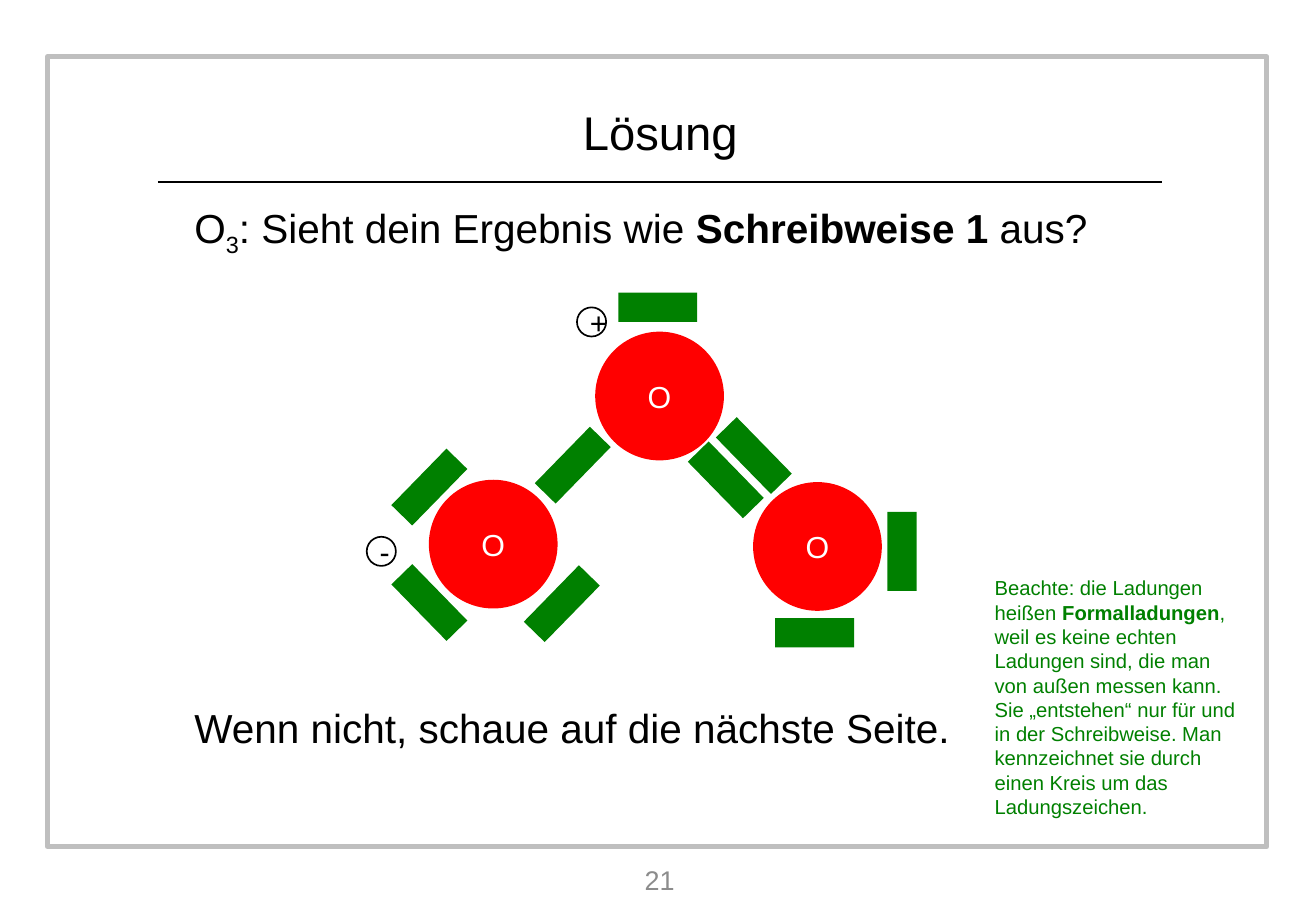
from pptx import Presentation
from pptx.dml.color import RGBColor
from pptx.enum.shapes import MSO_CONNECTOR, MSO_SHAPE
from pptx.enum.text import MSO_ANCHOR, MSO_AUTO_SIZE, PP_ALIGN
from pptx.oxml.ns import qn
from pptx.util import Pt
from lxml import etree

LINE = MSO_CONNECTOR.STRAIGHT
RECT, OVAL = MSO_SHAPE.RECTANGLE, MSO_SHAPE.OVAL
MIDDLE, TOP = MSO_ANCHOR.MIDDLE, MSO_ANCHOR.TOP
LEFT, CENTER = PP_ALIGN.LEFT, PP_ALIGN.CENTER
FIXED = MSO_AUTO_SIZE.NONE

COLORS = {"black": "000000", "white": "FFFFFF", "frame": "BFBFBF",
          "page": "8C8C8C", "atom": "FF0000", "pair": "008000"}

ATOM, CHARGE, PAIR = 76.3, 17.3, (46.8, 17.3)
ATOMS = [(352.8, 196.6), (254.2, 284.4), (446.4, 285.8)]
CHARGES = [("+", 342, 182.2), ("-", 217.4, 318.2)]
TILT = 45.7
# Electron pairs: left, top, rotation
PAIRS = [(309.6, 349.2, -TILT), (316.1, 267.1, -TILT), (231.1, 280.1, -TILT),
         (423.4, 261.4, TILT), (406.8, 275.8, TILT), (231.1, 348.5, TILT),
         (366.5, 173.5, 0), (459.4, 366.5, 0), (511.2, 318.2, 90)]


def color(name):
    return RGBColor.from_string(COLORS[name])


def style(obj, **values):
    for key, value in values.items():
        setattr(obj, key, value)


def place(shape, left, top, width, height):
    style(shape, left=Pt(left), top=Pt(top), width=Pt(width), height=Pt(height))


def write(shape, paras, size, ink, align=CENTER, anchor=MIDDLE, wrap=True, gap=0):
    """Each paragraph is a list of (text, font values) runs."""
    frame = shape.text_frame
    style(frame, auto_size=FIXED, word_wrap=wrap, vertical_anchor=anchor)
    for index, runs in enumerate(paras):
        para = frame.add_paragraph() if index else frame.paragraphs[0]
        style(para, alignment=align, space_before=Pt(gap if index else 0))
        for text, extra in runs:
            run = para.add_run()
            run.text = text
            style(run.font, name="Arial", size=Pt(size), **extra)
            run.font.color.rgb = color(ink)


def add_shape(slide, kind, box, fill=None, line=None, width=1):
    shape = slide.shapes.add_shape(kind, *map(Pt, box))
    shape.shadow.inherit = False
    if fill:
        shape.fill.solid()
        shape.fill.fore_color.rgb = color(fill)
    else:
        shape.fill.background()
    if line:
        shape.line.color.rgb = color(line)
        shape.line.width = Pt(width)
    else:
        shape.line.fill.background()
    return shape


def add_text(slide, box, *args, **values):
    write(slide.shapes.add_textbox(*map(Pt, box)), *args, **values)


def add_rule(slide, left, right, top):
    rule = slide.shapes.add_connector(LINE, Pt(left), Pt(top), Pt(right), Pt(top))
    rule.line.color.rgb = color("black")
    rule.line.width = Pt(1.5)
    etree.SubElement(rule.line._get_or_add_ln().getparent(), qn("a:effectLst"))


def add_body(slide):
    body = slide.placeholders[1]
    place(body, 108, 113, 566.6, 339.8)
    ask = [("O", {}), ("3", {}), (": Sieht dein Ergebnis wie ", {}),
           ("Schreibweise 1", {"bold": True}), (" aus?", {})]
    hint = [("Wenn nicht, schaue auf die nächste Seite.", {})]
    write(body, [ask, hint], 24, "black", align=LEFT, gap=264)
    for para in body.text_frame.paragraphs:
        props = para._p.get_or_add_pPr()
        props.set("marL", "0")
        props.set("indent", "0")
        etree.SubElement(props, qn("a:buNone"))
    index = body.text_frame.paragraphs[0].runs[1]
    index.font._element.set("baseline", "-25000")


def add_ozone(slide):
    for sign, left, top in CHARGES:
        ring = add_shape(slide, OVAL, (left, top, CHARGE, CHARGE), "white", "black")
        write(ring, [[(sign, {})]], 18, "black")
    for left, top in ATOMS:
        atom = add_shape(slide, OVAL, (left, top, ATOM, ATOM), "atom")
        write(atom, [[("O", {})]], 18, "white")
    for left, top, turn in PAIRS:
        add_shape(slide, RECT, (left, top, *PAIR), "pair").rotation = turn


def main():
    deck = Presentation()
    style(deck, slide_width=Pt(780), slide_height=Pt(540))
    slide = deck.slides.add_slide(deck.slide_layouts[1])

    # Frame, title and rule
    add_shape(slide, RECT, (28.1, 33.8, 722.9, 468), line="frame", width=3)
    title = slide.shapes.title
    place(title, 337.7, 56.9, 107.3, 42.5)
    write(title, [[("Lösung", {})]], 28, "black", wrap=False)
    add_rule(slide, 93.6, 689, 108)

    # Question and molecule
    add_body(slide)
    add_ozone(slide)

    # Note and page number
    note = [("Beachte: die Ladungen heißen ", {}), ("Formalladungen", {"bold": True}),
            (", weil es keine echten Ladungen sind, die man von außen messen kann. "
             "Sie „entstehen“ nur für und in der Schreibweise. Man kennzeichnet sie "
             "durch einen Kreis um das Ladungszeichen.", {})]
    add_text(slide, (582.5, 337.7, 158.4, 152.6), [note], 12, "pair",
             align=LEFT, anchor=TOP)
    add_text(slide, (303.1, 507.6, 175.7, 28.1), [[("21", {})]], 16, "page")

    deck.save("out.pptx")


if __name__ == "__main__":
    main()
